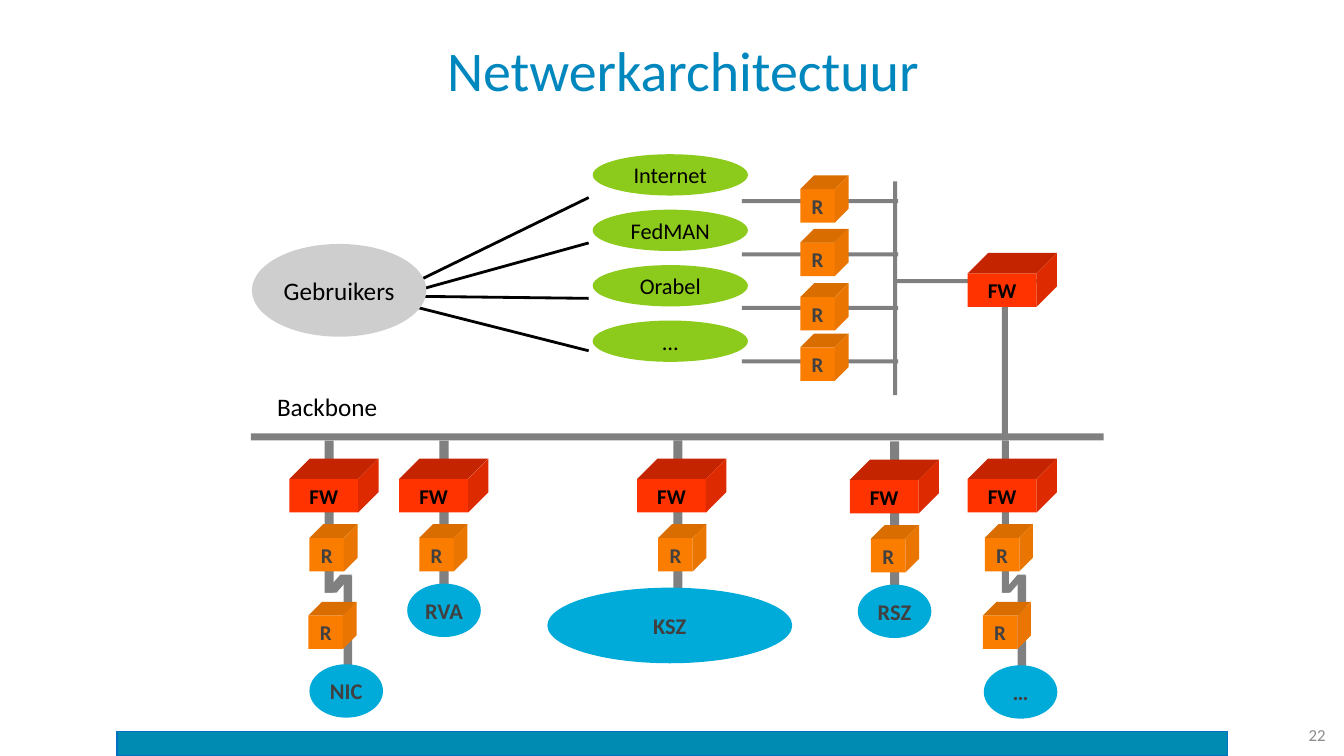
from dataclasses import dataclass

from pptx import Presentation
from pptx.dml.color import RGBColor
from pptx.enum.shapes import MSO_CONNECTOR as CONN, MSO_SHAPE as SHAPE
from pptx.enum.text import MSO_ANCHOR as ANCHOR, PP_ALIGN as ALIGN
from pptx.oxml.ns import qn
from pptx.util import Inches, Pt
from lxml.etree import SubElement


@dataclass(frozen=True)
class Theme:
    font: str = "Calibri"
    title: str = "0087BE"
    page: str = "8C8C8C"
    bar: str = "008CB2"
    bar_line: str = "0070C0"
    black: str = "000000"
    dark: str = "404040"
    cable: str = "808080"
    users: str = "CECECE"
    network: str = "8CCA1C"
    site: str = "00ABDA"
    firewall: tuple = ("FF3300", "C42500", "DE2A00")  # front, top, side
    router: tuple = ("FA7D00", "DA6D00", "EA7500")
    title_size: int = 40
    label_size: int = 18
    node_size: int = 16
    cube_size: int = 15
    page_size: int = 12


@dataclass(frozen=True)
class Box:
    x: float
    y: float
    w: float
    h: float

    def inner(self, dx, dy, w, h):
        return Box(self.x + dx, self.y + dy, w, h)

    def emu(self):
        return [cells(v) for v in (self.x, self.y, self.w, self.h)]


T = Theme()
COLS, ROWS = 133.33, 75  # square cells of a tenth of an inch


def cells(n):
    return Inches(n / 10)


def paint(sp, color):
    sp.shadow.inherit = False
    sp.fill.solid()
    sp.fill.fore_color.rgb = RGBColor.from_string(color)
    sp.line.fill.background()


def write(sp, text, size, color=T.black, bold=False, align=ALIGN.CENTER,
          anchor=ANCHOR.MIDDLE, wrap=False):
    tf = sp.text_frame
    tf.word_wrap = wrap
    tf.vertical_anchor = anchor
    p = tf.paragraphs[0]
    p.alignment = align
    r = p.add_run()
    r.text = text
    r.font.name, r.font.size, r.font.bold = T.font, Pt(size), bold
    r.font.color.rgb = RGBColor.from_string(color)
    return p


def add_shape(slide, kind, box, color):
    sp = slide.shapes.add_shape(kind, *box.emu())
    paint(sp, color)
    return sp


def add_cable(slide, box):
    add_shape(slide, SHAPE.RECTANGLE, box, T.cable)


def add_face(slide, points, color):
    start, *rest = [(cells(x), cells(y)) for x, y in points]
    builder = slide.shapes.build_freeform(*start, scale=1.0)
    builder.add_line_segments(rest, close=True)
    paint(builder.convert_to_shape(), color)


def add_cube(slide, x, y, w, depth, colors, text, text_color):
    """Labelled block whose top-left outer corner is x, y."""
    h = 3.33
    front, top, side = colors
    x1, x2, x3 = x + depth, x + w, x + w + depth
    y1, y2 = y + depth, y + depth + h
    sp = add_shape(slide, SHAPE.RECTANGLE, Box(x, y1, w, h), front)
    tf = sp.text_frame
    tf.margin_left = tf.margin_right = Inches(0.08)
    tf.margin_top = tf.margin_bottom = Inches(0.04)
    write(sp, text, T.cube_size, text_color, True)
    add_face(slide, [(x, y1), (x1, y), (x3, y), (x2, y1)], top)
    add_face(slide, [(x2, y1), (x3, y), (x3, y + h), (x2, y2)], side)


def add_firewall(slide, x, y):
    add_cube(slide, x, y, 6.83, 2.02, T.firewall, "FW", T.black)


def add_router(slide, x, y):
    add_cube(slide, x, y, 3.42, 1.36, T.router, "R", T.dark)


def add_link(slide, x1, y1, x2, y2):
    ln = slide.shapes.add_connector(CONN.STRAIGHT, *map(cells, (x1, y1, x2, y2)))
    ln.line.width = Pt(2)
    ln.line.color.rgb = RGBColor.from_string(T.black)
    SubElement(ln._element.spPr, qn("a:effectLst"))


def title_region(slide, box, text):
    sp = slide.shapes.title
    sp.left, sp.top, sp.width, sp.height = box.emu()
    write(sp, text, T.title_size, T.title, wrap=True).line_spacing = 0.9


def footer_region(slide, box, number):
    bar = add_shape(slide, SHAPE.RECTANGLE, box.inner(11.6, 1.7, 110.2, 2.4), T.bar)
    bar.line.color.rgb = RGBColor.from_string(T.bar_line)
    bar.line.width = Pt(1)
    sp = slide.shapes.add_textbox(*box.inner(124.3, 0, 8.2, 4).emu())
    write(sp, number, T.page_size, T.page, align=ALIGN.RIGHT, wrap=True)


def users_region(slide, box):
    """Users on the left, linked to the external networks on the right."""
    for y1, y2 in ((12.6, 4.3), (13.5, 8.8), (14.1, 14.3), (15.2, 19.5)):
        add_link(slide, box.x + 16.4, box.y + y1, box.x + 33.4, box.y + y2)
    users = add_shape(slide, SHAPE.OVAL, box.inner(0, 8.9, 17.3, 9.2), T.users)
    write(users, "Gebruikers", T.label_size)
    for row, name in enumerate(("Internet", "FedMAN", "Orabel", "…")):
        sp = add_shape(slide, SHAPE.OVAL,
                       box.inner(33.8, 5.5 * row, 15.4, 4.1), T.network)
        write(sp, name, T.node_size)


def routers_region(slide, box):
    """Routers on a shared line that leads through a firewall to the backbone."""
    for row, top in enumerate((0, 5.3, 10.7, 15.7)):
        add_cable(slide, box.inner(0, 2.35 + 5.3 * row, 15.5, 0.4))
        add_router(slide, box.x + 5.8, box.y + top)
    add_cable(slide, box.inner(15, 0.6, 0.4, 21.2))
    add_cable(slide, box.inner(15.4, 10.3, 15.5, 0.4))
    add_cable(slide, box.inner(25.8, 13, 0.6, 13.3))
    add_firewall(slide, box.x + 22.4, box.y + 7.7)


def backbone_region(slide, box):
    add_cable(slide, box.inner(0, 4.7, box.w, 0.7))
    sp = slide.shapes.add_textbox(*box.inner(1.6, 0, 19.9, 4).emu())
    write(sp, "Backbone", T.label_size, align=ALIGN.LEFT, anchor=ANCHOR.TOP, wrap=True)


def branch_region(slide, box, name, router, stem, site, thick=0.9, jog=None):
    """Firewall, router and site; jog is the width of the step to a second router."""
    add_cable(slide, box.inner(stem, 0, thick, box.h))
    add_firewall(slide, box.x, box.y + 1.8)
    add_router(slide, box.x + router, box.y + 8.3)
    if jog:
        add_cable(slide, box.inner(stem + jog - 0.85, 13.4, 0.85, 12.4))
        step = add_shape(slide, SHAPE.PARALLELOGRAM,
                         box.inner(stem, 13.3, jog, 1.8), T.cable)
        step.adjustments[0] = 0.875
        add_router(slide, box.x + site.x - 0.1, box.y + 16)
    sp = add_shape(slide, SHAPE.OVAL, box.inner(site.x, site.y, site.w, site.h), T.site)
    write(sp, name, T.node_size, T.dark, True)


def main():
    prs = Presentation()
    prs.slide_width, prs.slide_height = cells(COLS), cells(ROWS)
    slide = prs.slides.add_slide(prs.slide_layouts[5])

    footer_region(slide, Box(0, 70.9, COLS, 4.1), "22")
    title_region(slide, Box(7.2, 2.8, 121.1, 9), "Netwerkarchitectuur")
    routers_region(slide, Box(73.6, 17.4, 31.3, 26.3))
    users_region(slide, Box(25, 15.3, 49.2, 20.6))
    backbone_region(slide, Box(24.9, 38.3, 84.6, 5.4))

    top, drop = 43.7, 15.1
    near, far = Box(0.8, 14.2, 7.3, 5.3), Box(2, 22.2, 7.3, 5.3)
    wide = Box(-8.9, 14.6, 24.3, 7.5)
    branch_region(slide, Box(28.7, top, 8.9, drop), "NIC", 2, 3.5, far, jog=2.75)
    branch_region(slide, Box(39.6, top, 8.9, drop), "RVA", 2, 4, near)
    branch_region(slide, Box(63.2, top, 8.9, 18.6), "KSZ", 2.1, 3.6, wide)
    branch_region(slide, Box(84.3, top + 0.1, 8.9, drop), "RSZ", 2.1, 4, near)
    branch_region(slide, Box(96, top, 8.9, drop), "…", 1.7, 3.4,
                  Box(1.6, 22.3, 7.3, 5.3), thick=0.7, jog=2.4)

    prs.save("out.pptx")


if __name__ == "__main__":
    main()
